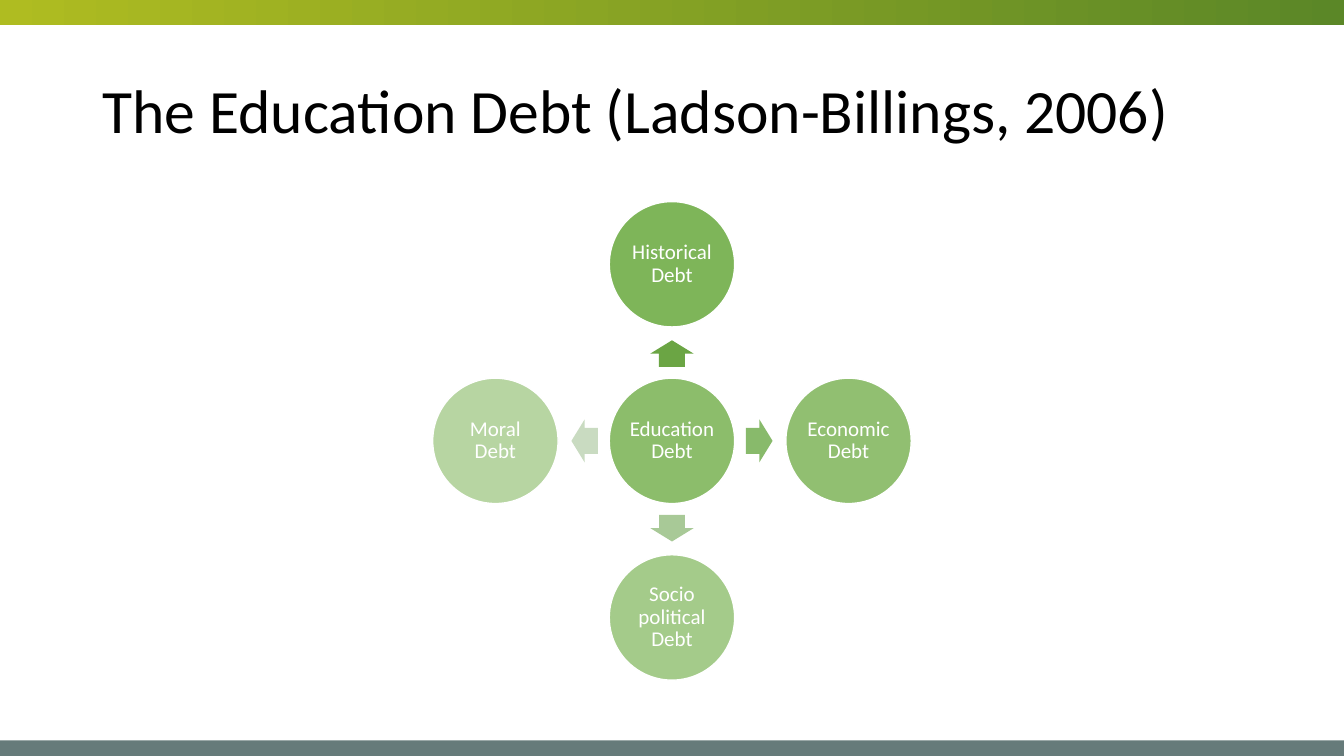
import math

import pptx
import pptx.dml.color
import pptx.enum.shapes
import pptx.enum.text
import pptx.oxml
import pptx.oxml.ns
import pptx.util

Cm = pptx.util.Cm
Pt = pptx.util.Pt
SHAPE = pptx.enum.shapes.MSO_SHAPE
ALIGN = pptx.enum.text.PP_ALIGN

TITLE = "The Education Debt (Ladson-Billings, 2006)"
FONT = "Calibri"
CIRCLE_COLOR = "70AD47"
HUB = ("Education Debt", 80)
DEBTS = [
    ("Historical Debt", 90, 270, "6BA544"),
    ("Economic Debt", 77, 0, "88BA6B"),
    ("Socio political Debt", 63, 90, "A8C997"),
    ("Moral Debt", 50, 180, "C9DBC1"),
]
TOP_BAR = (-0.03, 0.66, ("AFBC21", "5B8727"))
BOTTOM_BAR = (18.66, 0.41, ("667B7A",))

WIDTH, HEIGHT = 33.87, 19.05
CENTER_X, CENTER_Y = WIDTH / 2, 11.11
DIAMETER = 3.16
DEBT_RADIUS, ARROW_RADIUS = 4.45, 2.2
ARROW_LENGTH, ARROW_BREADTH = 0.67, 1.09


def rgb(value):
    return pptx.dml.color.RGBColor.from_string(value)


def add_block(page, kind, left, top, width, height, color):
    block = page.shapes.add_shape(kind, Cm(left), Cm(top), Cm(width), Cm(height))
    block.shadow.inherit = False
    block.fill.solid()
    block.fill.fore_color.rgb = rgb(color)
    block.line.fill.background()
    return block


def add_bar(page, top, height, colors):
    bar = add_block(page, SHAPE.RECTANGLE, 0, top, WIDTH, height, colors[0])
    if len(colors) > 1:
        bar.fill.gradient()
        bar.fill.gradient_angle = 0
        for stop, color in zip(bar.fill.gradient_stops, colors):
            stop.color.rgb = rgb(color)


def format_text(shape, size, color, alignment):
    frame = shape.text_frame
    frame.word_wrap = True
    frame.auto_size = pptx.enum.text.MSO_AUTO_SIZE.NONE
    frame.vertical_anchor = pptx.enum.text.MSO_ANCHOR.MIDDLE
    para = frame.paragraphs[0]
    para.alignment = alignment
    para.line_spacing = 0.9
    for span in para.runs:
        span.font.name = FONT
        span.font.size = Pt(size)
        span.font.color.rgb = rgb(color)


def add_circle(page, label, opacity, x, y):
    circle = add_block(page, SHAPE.OVAL, x - DIAMETER / 2, y - DIAMETER / 2,
                       DIAMETER, DIAMETER, CIRCLE_COLOR)
    circle.line.color.rgb = rgb("FFFFFF")
    circle.line.width = Pt(1)
    color = circle.fill._xPr.find(".//" + pptx.oxml.ns.qn("a:srgbClr"))
    alpha = pptx.oxml.parse_xml(
        f'<a:alpha {pptx.oxml.ns.nsdecls("a")} val="{opacity * 1000}"/>')
    color.append(alpha)
    frame = circle.text_frame
    frame.text = label
    frame.margin_left = frame.margin_right = Cm(0.05)
    frame.margin_top = frame.margin_bottom = Cm(0.05)
    format_text(circle, 15, "FFFFFF", ALIGN.CENTER)


def add_arrow(page, angle, color, x, y):
    arrow = add_block(page, SHAPE.RIGHT_ARROW, x - ARROW_LENGTH / 2,
                      y - ARROW_BREADTH / 2, ARROW_LENGTH, ARROW_BREADTH, color)
    arrow.adjustments[0] = 0.6
    arrow.adjustments[1] = 0.5
    arrow.rotation = angle


def spoke_point(angle, radius):
    turn = math.radians(angle)
    return CENTER_X + radius * math.cos(turn), CENTER_Y + radius * math.sin(turn)


def main():
    deck = pptx.Presentation()
    deck.slide_width, deck.slide_height = Cm(WIDTH), Cm(HEIGHT)
    page = deck.slides.add_slide(deck.slide_layouts[5])

    add_bar(page, *TOP_BAR)
    add_bar(page, *BOTTOM_BAR)

    title = page.shapes.title
    title.left, title.top = Cm(2.33), Cm(1.01)
    title.width, title.height = Cm(29.21), Cm(3.68)
    title.text_frame.text = TITLE
    format_text(title, 44, "000000", ALIGN.LEFT)

    add_circle(page, *HUB, CENTER_X, CENTER_Y)
    for label, opacity, angle, color in DEBTS:
        add_arrow(page, angle, color, *spoke_point(angle, ARROW_RADIUS))
        add_circle(page, label, opacity, *spoke_point(angle, DEBT_RADIUS))

    deck.save("out.pptx")


if __name__ == "__main__":
    main()
